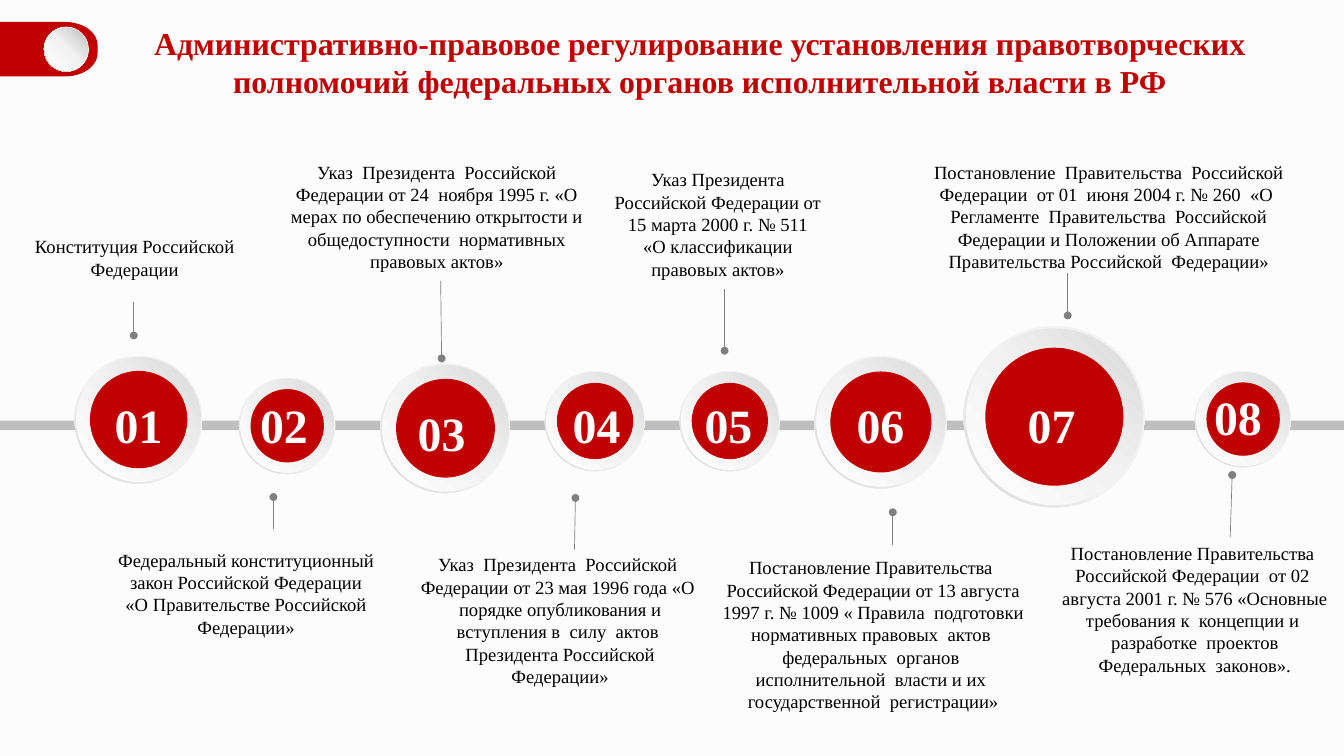
from copy import deepcopy
from math import cos, pi, sin

from pptx import Presentation
from pptx.dml.color import RGBColor
from pptx.enum.shapes import MSO_CONNECTOR, MSO_SHAPE
from pptx.enum.text import PP_ALIGN
from pptx.oxml.ns import qn
from pptx.util import Inches, Pt

OVAL, DONUT, RECT = MSO_SHAPE.OVAL, MSO_SHAPE.DONUT, MSO_SHAPE.RECTANGLE
LINE, CENTER = MSO_CONNECTOR.STRAIGHT, PP_ALIGN.CENTER
FONT = "Times New Roman"
COLS, ROWS = 140.6, 79.1  # square cells, 0.1 inch each
HEX = {"page": "FCFCFC", "red": "C00000", "rail": "BFBFBF", "lead": "808080",
       "white": "FFFFFF", "black": "000000", "pale": "F2F2F2",
       "soft": "D9D9D9", "mid": "BFBFBF", "dark": "A6A6A6"}

TITLE = ("Административно-правовое регулирование установления правотворческих "
         "полномочий федеральных органов исполнительной власти в РФ")

# centre x, centre y, diameter, centre x and y of the number
STAGES = [
    (14.5, 43.9, 13.4, 14.5, 44.4),
    (30.05, 44.55, 10.1, 29.7, 44.4),
    (46.6, 44.8, 13.6, 46.2, 45.2),
    (62.25, 44.05, 10.5, 62.4, 44.4),
    (76.35, 44.05, 10.5, 76.2, 44.4),
    (92.15, 44.15, 13.9, 92.1, 44.4),
    (110.3, 43.6, 19, 110, 44.4),
    (130.05, 43.85, 10.1, 129.5, 43.6),
]

# text box, lead line from its dot to its end, paragraphs
NOTES = [
    ((1.6, 23.9, 25, 6.1), (14, 35.1, 14, 31.6),
     ["Конституция Российской Федерации"]),
    ((10.9, 56.7, 29.7, 10.8), (28.6, 52, 28.6, 55.4),
     ["Федеральный конституционный закон Российской Федерации",
      "«О Правительстве Российской Федерации»"]),
    ((28.9, 16.1, 33.6, 13.2), (46.2, 37.5, 46.1, 29.4),
     ["Указ  Президента  Российской Федерации от 24  ноября 1995 г. «О "
      "мерах по обеспечению открытости и общедоступности  нормативных "
      "правовых актов»"]),
    ((42.2, 57.2, 32.8, 15.6), (60.2, 52.1, 60.1, 57.5),
     ["Указ  Президента  Российской  Федерации от 23 мая 1996 года «О  "
      "порядке опубликования и вступления в  силу  актов  Президента "
      "Российской Федерации»"]),
    ((62.5, 16.9, 25.2, 13.2), (75.8, 36.7, 75.8, 30.2),
     ["Указ Президента Российской Федерации от 15 марта 2000 г. № 511",
      "«О классификации правовых актов»"]),
    ((73.4, 57.5, 35.9, 17.9), (93.4, 53.6, 93.4, 57),
     ["Постановление Правительства  Российской Федерации от 13 августа "
      "1997 г. № 1009 « Правила  подготовки нормативных правовых  актов  "
      "федеральных  органов  исполнительной  власти и их  "
      "государственной  регистрации»"]),
    ((95.3, 16.1, 41.4, 13.2), (111.7, 33, 111.7, 28.6),
     ["Постановление  Правительства  Российской Федерации  от 01  июня "
      "2004 г. № 260  «О  Регламенте  Правительства  Российской Федерации "
      "и Положении об Аппарате Правительства Российской  Федерации»"]),
    ((109.4, 56, 31.2, 17.8), (128.9, 49.7, 128.7, 56.2),
     ["Постановление Правительства  Российской Федерации  от 02  августа "
      "2001 г. № 576 «Основные требования к  концепции и  разработке  "
      "проектов Федеральных  законов»."]),
]


def cells(*nums):
    return [Inches(n / 10) for n in nums]


def tint(name):
    return RGBColor.from_string(HEX[name])


def paint(shape, name):
    shape.shadow.inherit = False
    shape.line.fill.background()
    shape.fill.solid()
    shape.fill.fore_color.rgb = tint(name)


def blend(shape, names, spot, angle):
    """Fill with three colours; the angle runs counter-clockwise."""
    shape.shadow.inherit = False
    shape.line.fill.background()
    shape.fill.gradient()
    shape.fill.gradient_angle = angle
    stops = shape._element.spPr.find(qn("a:gradFill")).find(qn("a:gsLst"))
    stops.append(deepcopy(stops[-1]))
    for stop, name, place in zip(shape.fill.gradient_stops, names, (0, spot, 1)):
        stop.color.rgb = tint(name)
        stop.position = place


def disc(slide, kind, x, y, size):
    """Add a round shape centred at x, y."""
    box = cells(x - size / 2, y - size / 2, size, size)
    return slide.shapes.add_shape(kind, *box)


def button(slide, x, y, size, rim, face):
    """Add a shaded disc with a thin rim."""
    ring = disc(slide, DONUT, x, y, size)
    ring.adjustments[0] = 0.05
    blend(ring, rim, 0.55, 225)
    blend(disc(slide, OVAL, x, y, size * 0.97), face, 0.51, 45)


def write(slide, box, lines, size, color="black", bold=False, pad=(1.4, 0.7)):
    frame = slide.shapes.add_textbox(*cells(*box)).text_frame
    frame.word_wrap = True
    frame.margin_left = frame.margin_right = Inches(pad[0] / 10)
    frame.margin_top = frame.margin_bottom = Inches(pad[1] / 10)
    frame.text = "\n".join(lines)
    for para in frame.paragraphs:
        para.alignment = CENTER
        para.font.name = FONT
        para.font.size = Pt(size)
        para.font.bold = bold
        para.font.color.rgb = tint(color)


def stage(slide, label, x, y, size, text_x, text_y):
    button(slide, x, y, size, ("pale", "pale", "soft"), ("white", "pale", "soft"))
    paint(disc(slide, OVAL, x, y, size * 0.76), "red")
    box = (text_x - 5.1, text_y - 4.1, 10.2, 8.2)
    write(slide, box, [label], 36, "white", True, (2.1, 1.1))


def note(slide, box, ends, lines):
    write(slide, box, lines, 14)
    lead = slide.shapes.add_connector(LINE, *cells(*ends))
    lead.line.color.rgb = tint("lead")
    lead.line.width = Pt(0.5)
    props = lead._element.spPr
    head = props.find(qn("a:ln")).makeelement(qn("a:headEnd"), {"type": "oval"})
    props.find(qn("a:ln")).append(head)
    props.append(props.makeelement(qn("a:effectLst"), {}))


def switch(slide, x, y, wide, high):
    """Add the red tab with rounded right corners and its knob."""
    rx, ry = wide / 3, high * 0.42
    turns = [pi / 2 * step / 12 for step in range(13)]
    top = [(x + wide - rx + rx * sin(t), y + ry - ry * cos(t)) for t in turns]
    low = [(px, 2 * y + high - py) for px, py in reversed(top)]
    path = slide.shapes.build_freeform(*cells(x, y))
    path.add_line_segments([cells(*p) for p in top + low + [(x, y + high)]])
    paint(path.convert_to_shape(), "red")
    button(slide, x + wide * 0.68, y + high / 2, high * 0.82,
           ("white", "pale", "dark"), ("white", "pale", "mid"))


def main():
    deck = Presentation()
    deck.slide_width, deck.slide_height = cells(COLS, ROWS)
    slide = deck.slides.add_slide(deck.slide_layouts[6])
    slide.background.fill.solid()
    slide.background.fill.fore_color.rgb = tint("page")
    paint(slide.shapes.add_shape(RECT, *cells(0, 44, COLS, 1)), "rail")
    for count, spec_row in enumerate(STAGES, 1):
        stage(slide, f"{count:02}", *spec_row)
    for row in NOTES:
        note(slide, *row)
    switch(slide, 0, 2.3, 10.2, 5.7)
    write(slide, (10.2, 2, 126, 9.1), [TITLE], 24, "red", True, (1, 0.5))
    deck.save("out.pptx")


if __name__ == "__main__":
    main()
